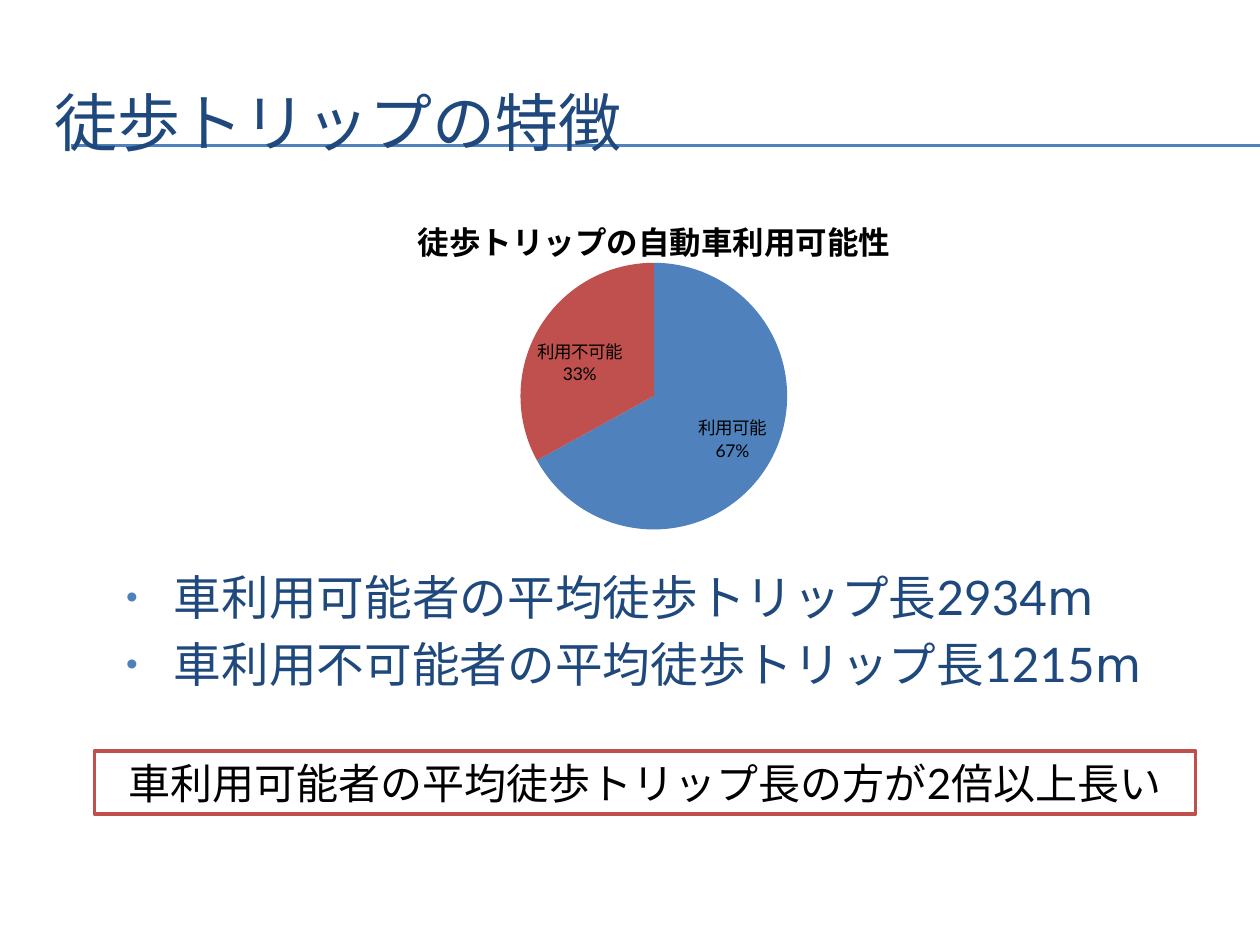
from lxml.etree import SubElement
from pptx import Presentation
from pptx.chart.data import CategoryChartData
from pptx.dml.color import RGBColor
from pptx.enum.chart import XL_CHART_TYPE, XL_LABEL_POSITION
from pptx.enum.lang import MSO_LANGUAGE_ID
from pptx.enum.shapes import MSO_CONNECTOR, MSO_SHAPE
from pptx.enum.text import MSO_ANCHOR, MSO_AUTO_SIZE, PP_ALIGN
from pptx.oxml import parse_xml
from pptx.oxml.ns import nsdecls, qn
from pptx.util import Inches, Pt

COLORS = {"navy": "1F497D", "blue": "4F81BD", "red": "C0504D",
          "black": "000000", "white": "FFFFFF"}
FONT = "Lato"
WIDTH, HEIGHT = 10, 7.5


def rgb(name):
    return RGBColor.from_string(COLORS[name])


def style_font(font, size, color="black", bold=False):
    font.name, font.size, font.bold = FONT, Pt(size), bold
    font.color.rgb = rgb(color)


def write(tf, *lines, size, color="black", align=PP_ALIGN.LEFT, anchor=MSO_ANCHOR.TOP):
    tf.word_wrap = True
    tf.auto_size = MSO_AUTO_SIZE.NONE
    tf.vertical_anchor = anchor
    for i, line in enumerate(lines):
        p = tf.paragraphs[0] if i == 0 else tf.add_paragraph()
        p.alignment = align
        r = p.add_run()
        r.text = line
        style_font(r.font, size, color)
        r.font.language_id = MSO_LANGUAGE_ID.JAPANESE
    return tf.paragraphs


class Deck:
    def __init__(self, prs):
        self.prs = prs
        prs.slide_width, prs.slide_height = Inches(WIDTH), Inches(HEIGHT)
        self.s = prs.slides.add_slide(prs.slide_layouts[1])

    def box(self, x, y, w, h):
        sw, sh = self.prs.slide_width, self.prs.slide_height
        return [round(v) for v in (x * sw, y * sh, w * sw, h * sh)]

    def place(self, sp, *area):
        sp.left, sp.top, sp.width, sp.height = self.box(*area)

    def rule(self, x, y):
        left, top, right, _ = self.box(x, y, 1, 0)
        cn = self.s.shapes.add_connector(MSO_CONNECTOR.STRAIGHT, left, top, right, top)
        cn.line.color.rgb = rgb("blue")
        cn.line.width = Pt(0.75)
        SubElement(cn.element.spPr, qn("a:effectLst"))
        cn.element.getparent().insert(2, cn.element)

    def title(self, text, *area):
        sp = self.s.shapes.title
        self.place(sp, *area)
        write(sp.text_frame, text, size=36, color="navy", anchor=MSO_ANCHOR.MIDDLE)

    def bullets(self, lines, *area):
        sp = self.s.placeholders[1]
        self.place(sp, *area)
        for p in write(sp.text_frame, *lines, size=27.2, color="navy"):
            pPr = p._p.get_or_add_pPr()
            pPr.set("marL", str(Inches(0.38)))
            pPr.set("indent", str(-Inches(0.38)))
            SubElement(SubElement(pPr, qn("a:buClr")), qn("a:srgbClr"), val=COLORS["blue"])
            SubElement(pPr, qn("a:buSzPct"), val="70000")
            SubElement(pPr, qn("a:buChar"), char="•")

    def pie(self, title, values, colors, plot, *area):
        data = CategoryChartData()
        data.categories = list(values)
        data.add_series("Series 1", list(values.values()))
        chart = self.s.shapes.add_chart(XL_CHART_TYPE.PIE, *self.box(*area), data).chart
        style_font(chart.font, 10)
        chart.has_legend = False
        chart.has_title = True
        p = chart.chart_title.text_frame.paragraphs[0]
        r = p.add_run()
        r.text = title
        style_font(r.font, 18, bold=True)

        pie = chart.plots[0]
        pie.vary_by_categories = True
        for i, color in enumerate(colors):
            fill = pie.series[0].points[i].format.fill
            fill.solid()
            fill.fore_color.rgb = rgb(color)
        pie.has_data_labels = True
        labels = pie.data_labels
        labels.show_value = False
        labels.show_category_name = labels.show_percentage = True
        labels.number_format, labels.number_format_is_linked = "0%", False
        labels.position = XL_LABEL_POSITION.BEST_FIT
        style_font(labels.font, 10)

        plot_area = chart.element.find(".//" + qn("c:plotArea"))
        for old in plot_area.findall(qn("c:layout")):
            plot_area.remove(old)
        sizes = "".join(f'<c:{k} val="{v}"/>' for k, v in zip("xywh", plot))
        plot_area.insert(0, parse_xml(
            f'<c:layout {nsdecls("c")}><c:manualLayout><c:layoutTarget val="inner"/>'
            f'<c:xMode val="edge"/><c:yMode val="edge"/>{sizes}'
            '</c:manualLayout></c:layout>'))

    def callout(self, text, *area):
        sp = self.s.shapes.add_shape(MSO_SHAPE.RECTANGLE, *self.box(*area))
        sp.shadow.inherit = False
        sp.fill.solid()
        sp.fill.fore_color.rgb = rgb("white")
        sp.line.color.rgb = rgb("red")
        sp.line.width = Pt(2)
        write(sp.text_frame, text, size=24, align=PP_ALIGN.CENTER, anchor=MSO_ANCHOR.MIDDLE)


def main():
    prs = Presentation()
    deck = Deck(prs)
    for y in (1.15, 1.16):
        deck.rule(0.56 / WIDTH, y / HEIGHT)
    deck.title("徒歩トリップの特徴", 0.33 / WIDTH, 0.5 / HEIGHT, 0.95, 0.92 / HEIGHT)
    deck.bullets(["車利用可能者の平均徒歩トリップ長2934ⅿ",
                  "車利用不可能者の平均徒歩トリップ長1215ⅿ"],
                 0.9 / WIDTH, 4.46 / HEIGHT, 8.35 / WIDTH, 1.1 / HEIGHT)
    deck.pie("徒歩トリップの自動車利用可能性", {"利用可能": 67, "利用不可能": 33},
             ["blue", "red"], (0.29, 0.2, 0.42, 0.79),
             2.56 / WIDTH, 1.55 / HEIGHT, 5.26 / WIDTH, 2.68 / HEIGHT)
    deck.callout("車利用可能者の平均徒歩トリップ長の方が2倍以上長い",
                 0.75 / WIDTH, 5.96 / HEIGHT, 8.74 / WIDTH, 0.5 / HEIGHT)
    prs.save("out.pptx")


if __name__ == "__main__":
    main()
